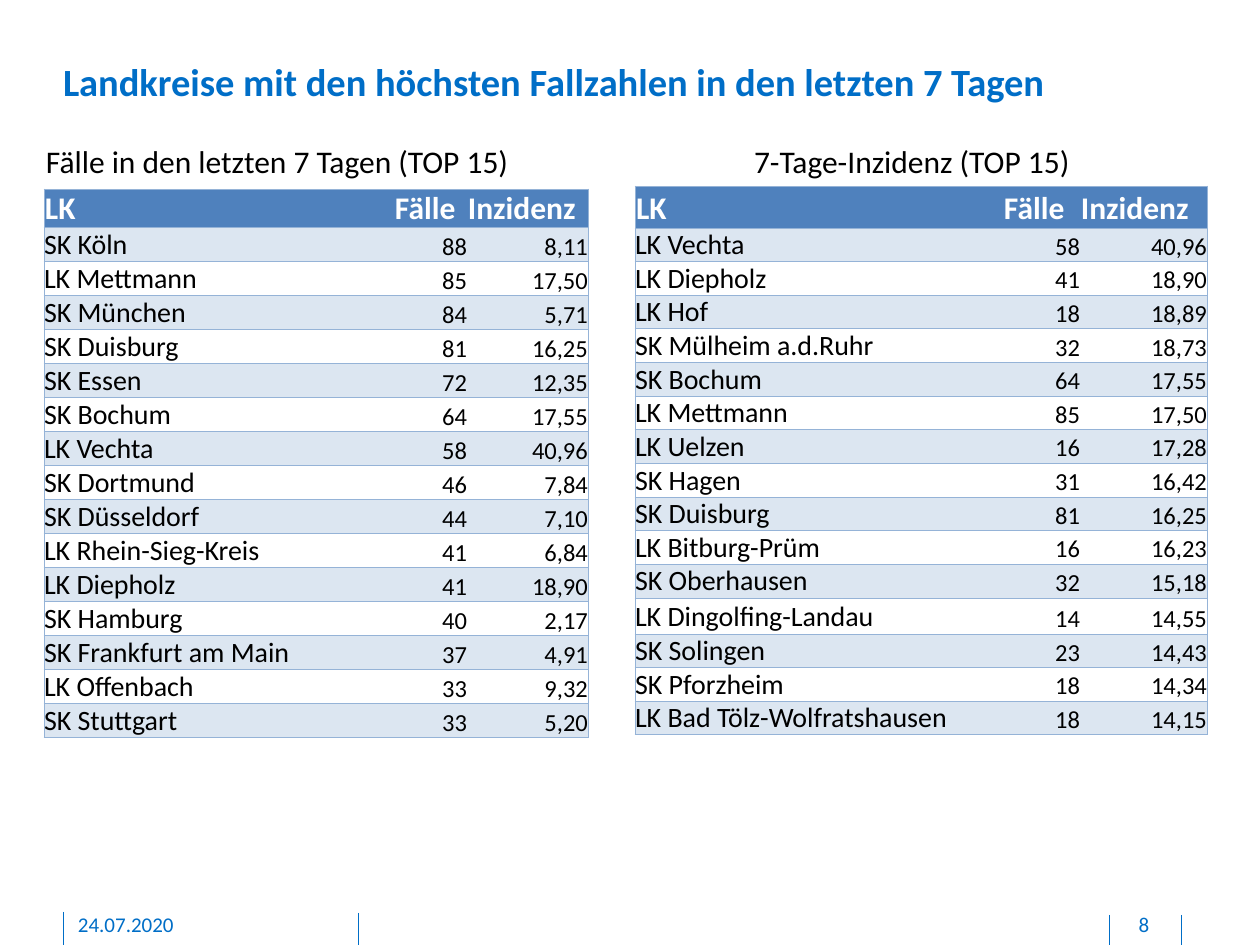
from dataclasses import dataclass

from lxml.etree import SubElement as Sub
from pptx import Presentation
from pptx.dml.color import RGBColor as Color
from pptx.enum.shapes import MSO_CONNECTOR as Conn
from pptx.enum.text import MSO_ANCHOR as Anchor, PP_ALIGN as Align
from pptx.oxml.ns import qn
from pptx.util import Emu, Pt

CASES = [
    ("SK Köln", "88", "8,11"),
    ("LK Mettmann", "85", "17,50"),
    ("SK München", "84", "5,71"),
    ("SK Duisburg", "81", "16,25"),
    ("SK Essen", "72", "12,35"),
    ("SK Bochum", "64", "17,55"),
    ("LK Vechta", "58", "40,96"),
    ("SK Dortmund", "46", "7,84"),
    ("SK Düsseldorf", "44", "7,10"),
    ("LK Rhein-Sieg-Kreis", "41", "6,84"),
    ("LK Diepholz", "41", "18,90"),
    ("SK Hamburg", "40", "2,17"),
    ("SK Frankfurt am Main", "37", "4,91"),
    ("LK Offenbach", "33", "9,32"),
    ("SK Stuttgart", "33", "5,20"),
]
RATES = [
    ("LK Vechta", "58", "40,96"),
    ("LK Diepholz", "41", "18,90"),
    ("LK Hof", "18", "18,89"),
    ("SK Mülheim a.d.Ruhr", "32", "18,73"),
    ("SK Bochum", "64", "17,55"),
    ("LK Mettmann", "85", "17,50"),
    ("LK Uelzen", "16", "17,28"),
    ("SK Hagen", "31", "16,42"),
    ("SK Duisburg", "81", "16,25"),
    ("LK Bitburg-Prüm", "16", "16,23"),
    ("SK Oberhausen", "32", "15,18"),
    ("LK Dingolfing-Landau", "14", "14,55"),
    ("SK Solingen", "23", "14,43"),
    ("SK Pforzheim", "18", "14,34"),
    ("LK Bad Tölz-Wolfratshausen", "18", "14,15"),
]
HEAD = ("LK", "Fälle", "Inzidenz")
PLAIN = "{2D5ABB26-0587-4C30-8999-92F81FD0307C}"


@dataclass(frozen=True)
class Theme:
    font: str = "Calibri"
    blue: str = "006EC7"
    head: str = "4F81BD"
    band: str = "DCE6F1"
    edge: str = "95B3D7"
    ink: str = "000000"
    white: str = "FFFFFF"
    title: int = 22
    label: int = 18
    name: int = 16
    count: int = 14
    foot: int = 12
    rule: float = 0.5


def px(num):
    return Emu(round(num * 914400 / 126))


def write(frame, text, *, font, size, color, bold=False, align=Align.LEFT):
    para = frame.paragraphs[0]
    para.alignment = align
    run = para.add_run()
    run.text = text
    run.font.name = font
    run.font.size = Pt(size)
    run.font.bold = bold
    run.font.color.rgb = Color.from_string(color)


class Sheet:
    def __init__(self, slide, theme):
        self.slide = slide
        self.theme = theme

    def line(self, x, top, end):
        rule = self.slide.shapes.add_connector(
            Conn.STRAIGHT, px(x), px(top), px(x), px(end))
        rule.line.color.rgb = Color.from_string(self.theme.blue)
        rule.line.width = Pt(self.theme.rule)
        Sub(rule._element.spPr, qn("a:effectLst"))

    def text(self, text, box, pad=(0, 0, 0, 0), wrap=True, **form):
        frame = self.slide.shapes.add_textbox(*map(px, box)).text_frame
        frame.word_wrap = wrap
        (frame.margin_left, frame.margin_top,
         frame.margin_right, frame.margin_bottom) = map(px, pad)
        write(frame, text, font=self.theme.font, **form)

    def edge(self, cell, col, last):
        sides = ["lnT", "lnB"]
        if col == last:
            sides.insert(0, "lnR")
        if col == 0:
            sides.insert(0, "lnL")
        props = cell._tc.get_or_add_tcPr()
        for side in sides:
            line = Sub(props, qn(f"a:{side}"), w=str(Pt(self.theme.rule)))
            fill = Sub(line, qn("a:solidFill"))
            Sub(fill, qn("a:srgbClr"), val=self.theme.edge)

    def cell(self, cell, text, row, col, anchor):
        theme = self.theme
        top = row == 0
        pad = px(1 if top else 0)
        cell.margin_left = cell.margin_top = cell.margin_right = pad
        cell.margin_bottom = 0
        cell.vertical_anchor = anchor if row and col == 0 else Anchor.BOTTOM
        self.edge(cell, col, len(HEAD) - 1)
        if row % 2 or top:
            cell.fill.solid()
            cell.fill.fore_color.rgb = Color.from_string(
                theme.head if top else theme.band)
        else:
            cell.fill.background()
        if top:
            form = dict(size=theme.label, color=theme.white, bold=True)
        elif col == 0:
            form = dict(size=theme.name, color=theme.ink)
        else:
            form = dict(size=theme.count, color=theme.ink, align=Align.RIGHT)
        write(cell.text_frame, text, font=theme.font, **form)

    def table(self, data, spot, cols, highs, anchor):
        rows = [HEAD, *data]
        grid = self.slide.shapes.add_table(
            len(rows), len(cols), *map(px, (*spot, sum(cols), sum(highs)))).table
        grid._tbl.tblPr.find(qn("a:tableStyleId")).text = PLAIN
        for col, wide in zip(grid.columns, cols):
            col.width = px(wide)
        for r, (items, high) in enumerate(zip(rows, highs)):
            grid.rows[r].height = px(high)
            for c, text in enumerate(items):
                self.cell(grid.cell(r, c), text, r, c, anchor)


def main():
    deck = Presentation()
    deck.slide_width, deck.slide_height = px(1260), px(945)
    theme = Theme()
    sheet = Sheet(deck.slides.add_slide(deck.slide_layouts[6]), theme)

    for x, top in ((358, 913), (63, 912), (1181, 915), (1109, 915)):
        sheet.line(x, top, 945)

    sheet.text("Landkreise mit den höchsten Fallzahlen in den letzten 7 Tagen",
               (63, 58, 1115, 47), size=theme.title, color=theme.blue, bold=True)
    foot = dict(pad=(0, 0, 0, 6), size=theme.foot, color=theme.blue)
    sheet.text("24.07.2020", (78, 912, 256, 26), **foot)
    sheet.text("8", (1110, 912, 68, 26), align=Align.CENTER, **foot)

    sheet.table(CASES, (44, 189), (350, 73, 121), [37] + [34] * 15,
                Anchor.MIDDLE)
    sheet.table(RATES, (635, 186), (368, 77, 127),
                [42] + [33] * 11 + [36] + [33] * 3, Anchor.BOTTOM)

    label = dict(pad=(13, 6, 13, 6), wrap=False, size=theme.label,
                 color=theme.ink)
    sheet.text("7-Tage-Inzidenz (TOP 15)", (741, 136, 345, 50), **label)
    sheet.text("Fälle in den letzten 7 Tagen (TOP 15)",
               (33, 136, 494, 50), **label)
    deck.save("out.pptx")


if __name__ == "__main__":
    main()
